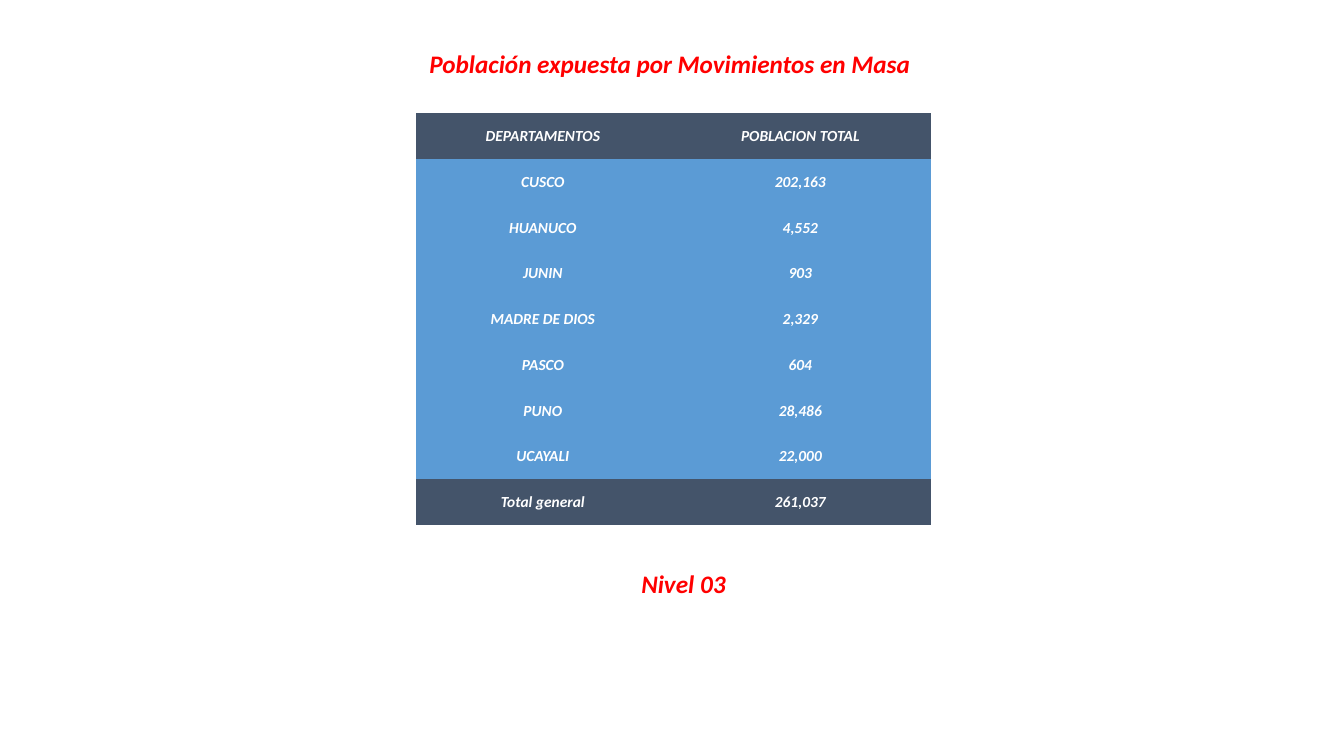
from pptx import Presentation
from pptx.dml.color import RGBColor
from pptx.enum.text import MSO_ANCHOR, MSO_AUTO_SIZE, PP_ALIGN
from pptx.oxml.ns import qn
from pptx.util import Pt

COLORS = {"red": "FF0000", "white": "FFFFFF", "slate": "44546A", "blue": "5B9BD5"}
NO_STYLE = "{2D5ABB26-0587-4C30-8999-92F81FD0307C}"


def write(frame, text, size, color):
    para = frame.paragraphs[0]
    para.alignment = PP_ALIGN.CENTER
    span = para.add_run()
    span.text = text
    span.font.name = "Calibri"
    span.font.size = Pt(size)
    span.font.bold = True
    span.font.italic = True
    span.font.color.rgb = RGBColor.from_string(COLORS[color])


deck = Presentation()
deck.slide_width = Pt(960)
deck.slide_height = Pt(540)
page = deck.slides.add_slide(deck.slide_layouts[6])

headings = [
    ("Población expuesta por Movimientos en Masa", 297.4, 31, 362.2, False),
    ("Nivel 03", 448.6, 402.5, 79.2, True),
]
for text, left, top, width, wrap in headings:
    box = page.shapes.add_textbox(Pt(left), Pt(top), Pt(width), Pt(29))
    box.text_frame.word_wrap = wrap
    box.text_frame.auto_size = MSO_AUTO_SIZE.SHAPE_TO_FIT_TEXT
    write(box.text_frame, text, size=18, color="red")

rows = [
    ("DEPARTAMENTOS", "POBLACION TOTAL"),
    ("CUSCO", "202,163"),
    ("HUANUCO", "4,552"),
    ("JUNIN", "903"),
    ("MADRE DE DIOS", "2,329"),
    ("PASCO", "604"),
    ("PUNO", "28,486"),
    ("UCAYALI", "22,000"),
    ("Total general", "261,037"),
]
column_widths = [180.7, 187.2]
row_height = 32.7
holder = page.shapes.add_table(
    len(rows), len(column_widths), Pt(297.4), Pt(80.7),
    Pt(sum(column_widths)), Pt(row_height * len(rows)),
)
for style in holder.element.iter(qn("a:tableStyleId")):
    style.text = NO_STYLE
table = holder.table
for column, width in zip(table.columns, column_widths):
    column.width = Pt(width)

for row_index, values in enumerate(rows):
    table.rows[row_index].height = Pt(row_height)
    fill = "slate" if row_index in (0, len(rows) - 1) else "blue"
    for column_index, text in enumerate(values):
        cell = table.cell(row_index, column_index)
        cell.fill.solid()
        cell.fill.fore_color.rgb = RGBColor.from_string(COLORS[fill])
        cell.vertical_anchor = MSO_ANCHOR.MIDDLE
        cell.margin_left = cell.margin_right = cell.margin_top = Pt(0.7)
        cell.margin_bottom = Pt(0)
        write(cell.text_frame, text, size=11, color="white")

deck.save("out.pptx")
